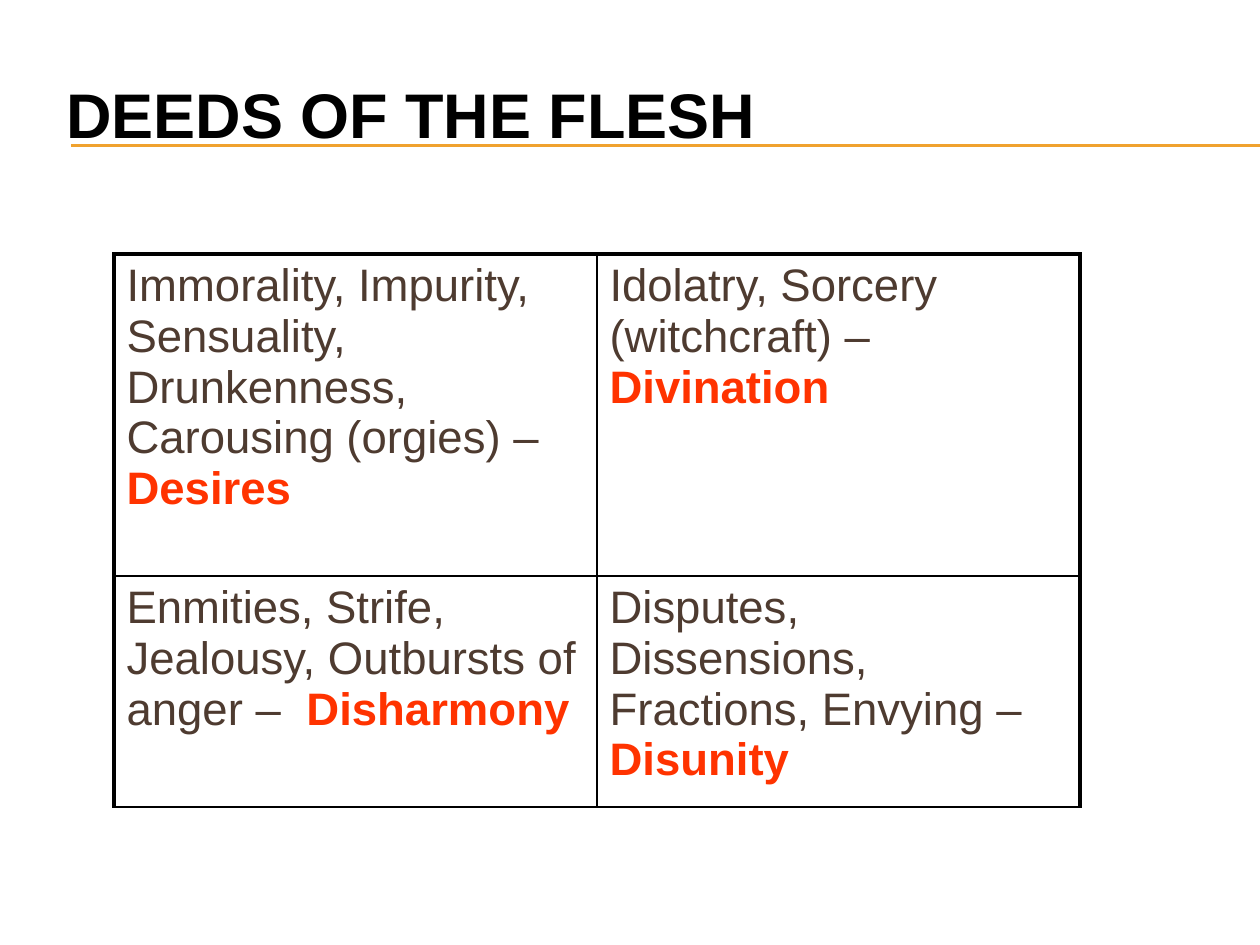
from dataclasses import dataclass

from lxml.etree import SubElement
from pptx import Presentation
from pptx.dml.color import RGBColor
from pptx.enum.shapes import MSO_CONNECTOR
from pptx.enum.text import MSO_ANCHOR
from pptx.oxml.ns import qn
from pptx.util import Pt

EMU_PER_PX = 914400 / 126
SLIDE_WIDTH, SLIDE_HEIGHT = 1260, 945


@dataclass(frozen=True)
class Theme:
    font: str = "Arial"
    title_color: str = "000000"
    body_color: str = "4E3B30"
    accent_color: str = "FF3300"
    rule_color: str = "F0A22E"
    border_color: str = "000000"
    title_size: int = 36
    body_size: int = 26
    rule_width: float = 0.75
    outer_border: float = 2.25
    inner_border: float = 1


def px(length):
    return round(length * EMU_PER_PX)


class SlideBuilder:
    def __init__(self, slide, theme):
        self.slide = slide
        self.theme = theme

    def run(self, paragraph, text, size, color, bold=False):
        run = paragraph.add_run()
        run.text = text
        run.font.name = self.theme.font
        run.font.size = Pt(size)
        run.font.bold = bold
        run.font.color.rgb = RGBColor.from_string(color)

    def rule(self, left, right, y):
        rule = self.slide.shapes.add_connector(
            MSO_CONNECTOR.STRAIGHT, px(left), px(y), px(right), px(y))
        rule.line.color.rgb = RGBColor.from_string(self.theme.rule_color)
        rule.line.width = Pt(self.theme.rule_width)
        SubElement(rule._element.spPr, qn("a:effectLst"))

    def title(self, text, left, top, width, height):
        frame = self.slide.shapes.add_textbox(
            px(left), px(top), px(width), px(height)).text_frame
        frame.word_wrap = True
        frame.vertical_anchor = MSO_ANCHOR.MIDDLE
        self.run(frame.paragraphs[0], text, self.theme.title_size,
                 self.theme.title_color, bold=True)

    def borders(self, cell, widths):
        """Draw the cell's edges; widths maps a side (L, R, T, B) to points."""
        properties = cell._tc.get_or_add_tcPr()
        for position, (side, width) in enumerate(widths.items()):
            edge = properties.makeelement(qn(f"a:ln{side}"), {"w": str(Pt(width))})
            fill = SubElement(edge, qn("a:solidFill"))
            SubElement(fill, qn("a:srgbClr"), val=self.theme.border_color)
            properties.insert(position, edge)

    def deeds_table(self, deeds, left, top, width, row_heights):
        """Fill a grid of (deeds, summary) pairs, heavy on the left, top and right."""
        theme = self.theme
        columns = len(deeds[0])
        table = self.slide.shapes.add_table(
            len(deeds), columns, px(left), px(top), px(width),
            px(sum(row_heights))).table
        table.first_row = table.horz_banding = False
        for row, height in enumerate(row_heights):
            table.rows[row].height = px(height)
            for column, (listing, summary) in enumerate(deeds[row]):
                cell = table.cell(row, column)
                cell.fill.background()
                paragraph = cell.text_frame.paragraphs[0]
                self.run(paragraph, listing, theme.body_size, theme.body_color)
                self.run(paragraph, summary, theme.body_size,
                         theme.accent_color, bold=True)
                on_edge = {"L": column == 0, "R": column == columns - 1,
                           "T": row == 0, "B": False}
                self.borders(cell, {
                    side: theme.outer_border if outer else theme.inner_border
                    for side, outer in on_edge.items()})


DEEDS = [
    [("Immorality, Impurity, Sensuality, Drunkenness, Carousing (orgies) –  ",
      "Desires"),
     ("Idolatry, Sorcery (witchcraft) – ", "Divination")],
    [("Enmities, Strife, Jealousy, Outbursts of anger –  ", "Disharmony"),
     ("Disputes, Dissensions, Fractions, Envying –  ", "Disunity")],
]


def main():
    presentation = Presentation()
    presentation.slide_width = px(SLIDE_WIDTH)
    presentation.slide_height = px(SLIDE_HEIGHT)
    blank = presentation.slide_layouts[6]
    builder = SlideBuilder(presentation.slides.add_slide(blank), Theme())
    for y in (145, 146):
        builder.rule(71, SLIDE_WIDTH, y)
    builder.title("DEEDS OF THE FLESH", 54, 16, 966, 194)
    builder.deeds_table(DEEDS, 114, 254, 966, (322, 213))
    presentation.save("out.pptx")


if __name__ == "__main__":
    main()
